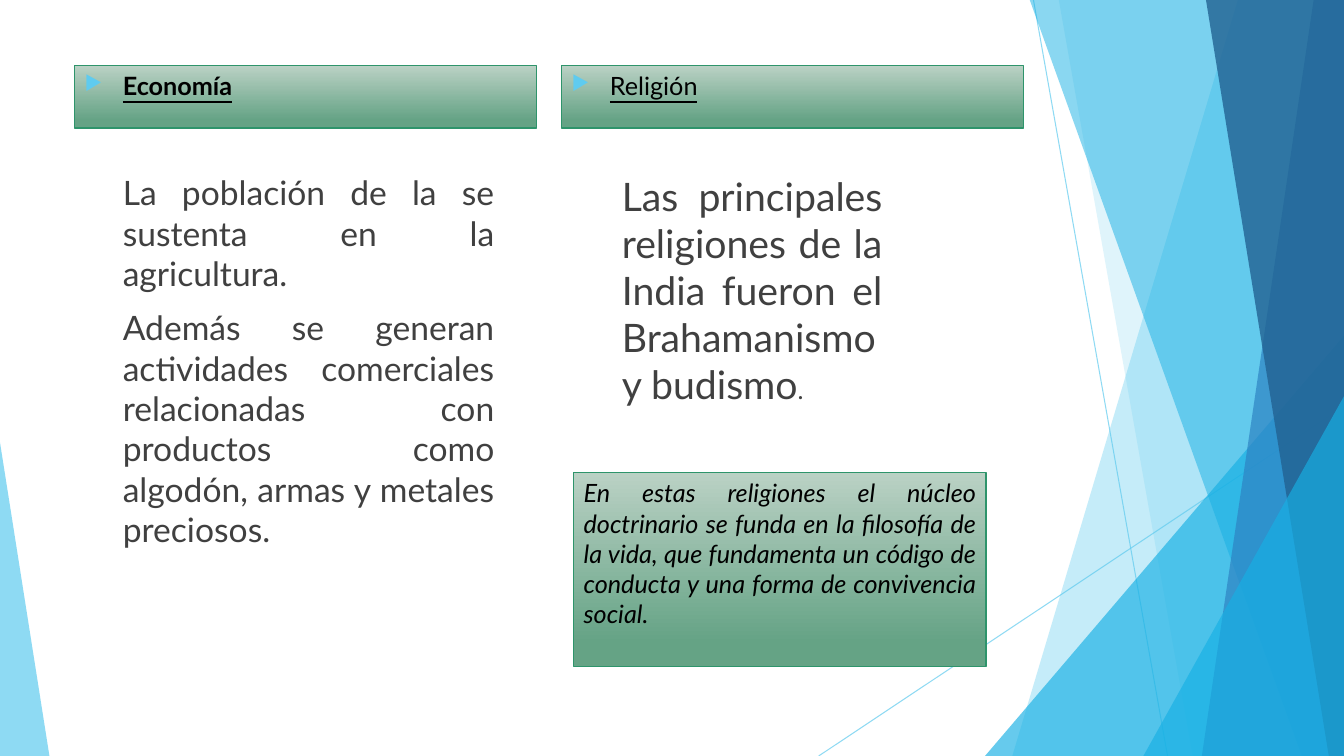
from lxml.etree import SubElement
from pptx import Presentation
from pptx.dml.color import RGBColor
from pptx.enum.shapes import MSO_CONNECTOR, MSO_SHAPE
from pptx.enum.text import MSO_ANCHOR, PP_ALIGN
from pptx.oxml.ns import qn
from pptx.util import Inches, Pt

WIDTH, HEIGHT = 13.33, 7.5
SKY = RGBColor(0x5F, 0xCB, 0xEF)
CYAN = RGBColor(0x17, 0xB0, 0xE4)
BLUE = RGBColor(0x2E, 0x83, 0xC3)
NAVY = RGBColor(0x22, 0x62, 0x92)
MINT = RGBColor(0xBA, 0xD1, 0xC4)
GREEN = RGBColor(0x65, 0xA3, 0x85)
EDGE = RGBColor(0x2E, 0x94, 0x6B)
BLACK = RGBColor(0, 0, 0)
GRAY = RGBColor(0x40, 0x40, 0x40)
FONT = "Lato"
HANGING = 0.38


def set_alpha(element, percent):
    """Set the opacity of the solid colour found in an element."""
    color = next(element.iter(qn("a:srgbClr")))
    SubElement(color, qn("a:alpha"), val=str(percent * 1000))


def tint(shape, color, percent):
    """Give a shape a translucent fill, no line and no shadow."""
    shape.shadow.inherit = False
    shape.fill.solid()
    shape.fill.fore_color.rgb = color
    set_alpha(shape.fill._xPr.find(qn("a:solidFill")), percent)
    shape.line.fill.background()


def add_ray(slide, start, end):
    """Draw a thin translucent line."""
    ray = slide.shapes.add_connector(
        MSO_CONNECTOR.STRAIGHT, *[Inches(value) for value in start + end])
    ray.line.color.rgb = SKY
    ray.line.width = Pt(0.75)
    properties = ray._element.spPr
    set_alpha(properties, 70)
    SubElement(properties, qn("a:effectLst"))


def add_band(slide, top_x, bottom_x, color, percent):
    """Draw a full-height band from a slanted edge to the right side."""
    corners = [(WIDTH, -0.01), (WIDTH, HEIGHT), (bottom_x, HEIGHT)]
    builder = slide.shapes.build_freeform(Inches(top_x), Inches(-0.01))
    builder.add_line_segments([(Inches(x), Inches(y)) for x, y in corners])
    tint(builder.convert_to_shape(), color, percent)


def add_corner(slide, left, top, width, apex, color, percent):
    """Draw a right triangle that stands on the bottom of the slide."""
    triangle = slide.shapes.add_shape(
        MSO_SHAPE.ISOSCELES_TRIANGLE, Inches(left), Inches(top),
        Inches(width), Inches(HEIGHT - top))
    triangle.adjustments[0] = apex
    tint(triangle, color, percent)


def add_panel(slide, left, top, width, height):
    """Draw a green gradient rectangle and return it."""
    panel = slide.shapes.add_shape(
        MSO_SHAPE.RECTANGLE, Inches(left), Inches(top), Inches(width), Inches(height))
    panel.shadow.inherit = False
    panel.fill.gradient()
    panel.fill.gradient_angle = 270
    for stop, position, color in zip(panel.fill.gradient_stops, (0, 0.88), (MINT, GREEN)):
        stop.position = position
        stop.color.rgb = color
    panel.line.color.rgb = EDGE
    panel.line.width = Pt(1)
    return panel


def add_textbox(slide, left, top, width, height):
    """Add an empty text box and return it."""
    return slide.shapes.add_textbox(Inches(left), Inches(top), Inches(width), Inches(height))


def add_bullet(properties):
    """Give a paragraph a hanging triangular bullet."""
    properties.set("indent", str(-Inches(HANGING)))
    color = SubElement(properties, qn("a:buClr"))
    SubElement(color, qn("a:srgbClr"), val=str(SKY))
    SubElement(properties, qn("a:buSzPct"), val="80000")
    SubElement(properties, qn("a:buChar"), char="▶")


def write(shape, *paragraphs, size=18, color=BLACK, bold=False, italic=False,
          underline=False, align=PP_ALIGN.JUSTIFY, margin=0, before=0, bullet=False):
    """Write paragraphs, each a list of texts or (text, size) runs, into a shape."""
    frame = shape.text_frame
    frame.word_wrap = True
    frame.vertical_anchor = MSO_ANCHOR.TOP
    for index, runs in enumerate(paragraphs):
        paragraph = frame.add_paragraph() if index else frame.paragraphs[0]
        paragraph.alignment = align
        paragraph.space_before = Pt(before)
        properties = paragraph._p.get_or_add_pPr()
        properties.set("marL", str(Inches(margin)))
        properties.set("indent", "0")
        if bullet:
            add_bullet(properties)
        for item in runs:
            text, run_size = item if isinstance(item, tuple) else (item, size)
            run = paragraph.add_run()
            run.text = text
            font = run.font
            font.name, font.size = FONT, Pt(run_size)
            font.bold, font.italic, font.underline = bold, italic, underline
            font.color.rgb = color


def add_backdrop(slide):
    """Draw the translucent facets at the sides of the slide."""
    add_ray(slide, (10.25, 0), (11.58, HEIGHT))
    add_ray(slide, (WIDTH, 4.03), (8.12, HEIGHT))
    add_band(slide, 12.28, 10.04, SKY, 36)
    add_band(slide, 10.5, 11.83, SKY, 20)
    add_corner(slide, 9.77, 3.33, 3.56, 1, CYAN, 66)
    add_band(slide, 10.21, 12.91, CYAN, 50)
    add_band(slide, 13.03, 11.92, BLUE, 70)
    add_band(slide, 11.96, 13.18, NAVY, 80)
    add_corner(slide, 11.34, 3.93, 1.99, 1, CYAN, 66)
    add_corner(slide, 0, 4.39, 0.49, 0, SKY, 70)


def main():
    """Build the slide on economy and religion."""
    presentation = Presentation()
    presentation.slide_width = Inches(WIDTH)
    presentation.slide_height = Inches(HEIGHT)
    slide = presentation.slides.add_slide(presentation.slide_layouts[6])
    add_backdrop(slide)

    for left, heading, bold in ((0.74, "Economía", True), (5.57, "Religión", False)):
        write(add_panel(slide, left, 0.65, 4.58, 0.62), [heading], bold=bold,
              underline=True, align=PP_ALIGN.LEFT, margin=HANGING, before=10, bullet=True)

    write(add_textbox(slide, 0.74, 1.66, 4.26, 4.95),
          ["La población de la se sustenta en la agricultura."],
          ["Además se generan actividades comerciales relacionadas con productos "
           "como algodón, armas y metales preciosos."],
          size=24, color=GRAY, margin=HANGING, before=10)
    write(add_textbox(slide, 5.69, 1.66, 3.16, 3.02),
          ["Las principales religiones de la India fueron el Brahamanismo y budismo",
           (".", 18)],
          size=28, color=GRAY, margin=HANGING, before=10)
    write(add_panel(slide, 5.69, 4.69, 4.09, 1.92),
          ["En estas religiones el núcleo doctrinario se funda en la filosofía de la vida, "
           "que fundamenta un código de conducta y una forma de convivencia social."],
          italic=True)
    presentation.save("out.pptx")


if __name__ == "__main__":
    main()
